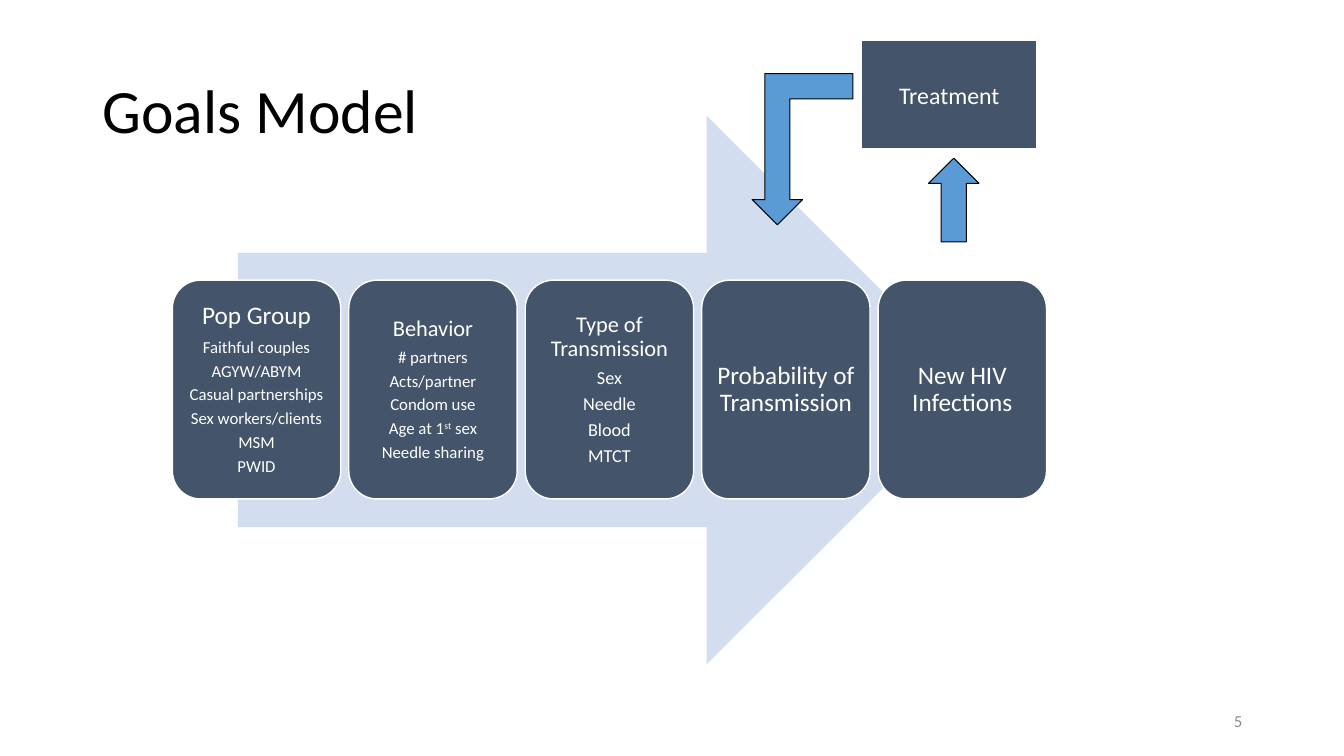
from pptx import Presentation
from pptx.dml.color import RGBColor
from pptx.enum.shapes import MSO_SHAPE
from pptx.enum.text import MSO_ANCHOR, PP_ALIGN
from pptx.util import Inches, Pt

COLORS = {
    "navy": "44546A",
    "blue": "5B9BD5",
    "pale": "D2DEEF",
    "white": "FFFFFF",
    "black": "000000",
    "grey": "8C8C8C",
}

# Heading, heading size, item size, items; "^" encloses a superscript
STAGES = [
    ("Pop Group", 18, 12, ["Faithful couples", "AGYW/ABYM", "Casual partnerships",
                           "Sex workers/clients", "MSM", "PWID"]),
    ("Behavior", 16, 12, ["# partners", "Acts/partner", "Condom use",
                          "Age at 1^st^ sex", "Needle sharing"]),
    ("Type of Transmission", 16, 13, ["Sex", "Needle", "Blood", "MTCT"]),
    ("Probability of Transmission", 18, 12, []),
    ("New HIV Infections", 18, 12, []),
]


class SlideBuilder:
    font = "Calibri"

    def __init__(self, page):
        self.page = page

    def color(self, name):
        return RGBColor.from_string(COLORS[name])

    def shape(self, kind, left, top, width, height, fill, line=None, weight=1):
        shape = self.page.shapes.add_shape(
            kind, Inches(left), Inches(top), Inches(width), Inches(height))
        shape.shadow.inherit = False
        shape.fill.solid()
        shape.fill.fore_color.rgb = self.color(fill)
        if line:
            shape.line.color.rgb = self.color(line)
            shape.line.width = Pt(weight)
        else:
            shape.line.fill.background()
        return shape

    def fill_paragraph(self, para, text, size, color, align):
        para.alignment = align
        for index, part in enumerate(text.split("^")):
            span = para.add_run()
            span.text = part
            span.font.name = self.font
            span.font.size = Pt(size)
            span.font.color.rgb = self.color(color)
            if index % 2:
                span._r.get_or_add_rPr().set("baseline", "30000")

    def label(self, shape, text, size, color="white", align=PP_ALIGN.CENTER):
        frame = shape.text_frame
        frame.word_wrap = True
        frame.vertical_anchor = MSO_ANCHOR.MIDDLE
        self.fill_paragraph(frame.paragraphs[0], text, size, color, align)
        return frame

    def text(self, text, left, top, width, height, size, color, align):
        box = self.page.shapes.add_textbox(
            Inches(left), Inches(top), Inches(width), Inches(height))
        return self.label(box, text, size, color, align)

    def stage(self, left, heading, heading_size, item_size, items):
        box = self.shape(MSO_SHAPE.ROUNDED_RECTANGLE, left, 2.78, 1.67, 2.17,
                         "navy", "white")
        frame = self.label(box, heading, heading_size)
        frame.margin_left = frame.margin_right = Inches(0.07)
        frame.margin_top = frame.margin_bottom = Inches(0.07)
        for item in items:
            self.fill_paragraph(frame.add_paragraph(), item, item_size, "white",
                                PP_ALIGN.CENTER)
        for index, para in enumerate(frame.paragraphs):
            para.line_spacing = 0.9
            para.space_after = Pt(0.34 * (item_size if index else heading_size))


def main():
    deck = Presentation()
    deck.slide_width, deck.slide_height = Inches(13.33), Inches(7.5)
    page = deck.slides.add_slide(deck.slide_layouts[6])
    builder = SlideBuilder(page)

    # Title
    title = builder.text("Goals Model", 0.92, 0.4, 11.5, 1.45, 44, "black", PP_ALIGN.LEFT)
    title.paragraphs[0].line_spacing = 0.9

    # Process arrow with its stages
    builder.shape(MSO_SHAPE.RIGHT_ARROW, 2.36, 1.15, 7.37, 5.44, "pale")
    for index, stage in enumerate(STAGES):
        builder.stage(1.71 + index * 1.75, *stage)

    # Treatment feedback loop
    builder.shape(MSO_SHAPE.UP_ARROW, 9.21, 1.57, 0.5, 0.83, "blue", "black", 0.75)
    treatment = builder.shape(MSO_SHAPE.RECTANGLE, 8.54, 0.4, 1.75, 1.08,
                              "navy", "white", 1.5)
    builder.label(treatment, "Treatment", 17)
    feedback = builder.shape(MSO_SHAPE.BENT_UP_ARROW, 7.46, 0.73, 1, 1.5,
                             "blue", "black", 0.75)
    feedback.rotation = 180

    # Page number
    builder.text("5", 9.42, 6.95, 3, 0.4, 12, "grey", PP_ALIGN.RIGHT)

    deck.save("out.pptx")


if __name__ == "__main__":
    main()
